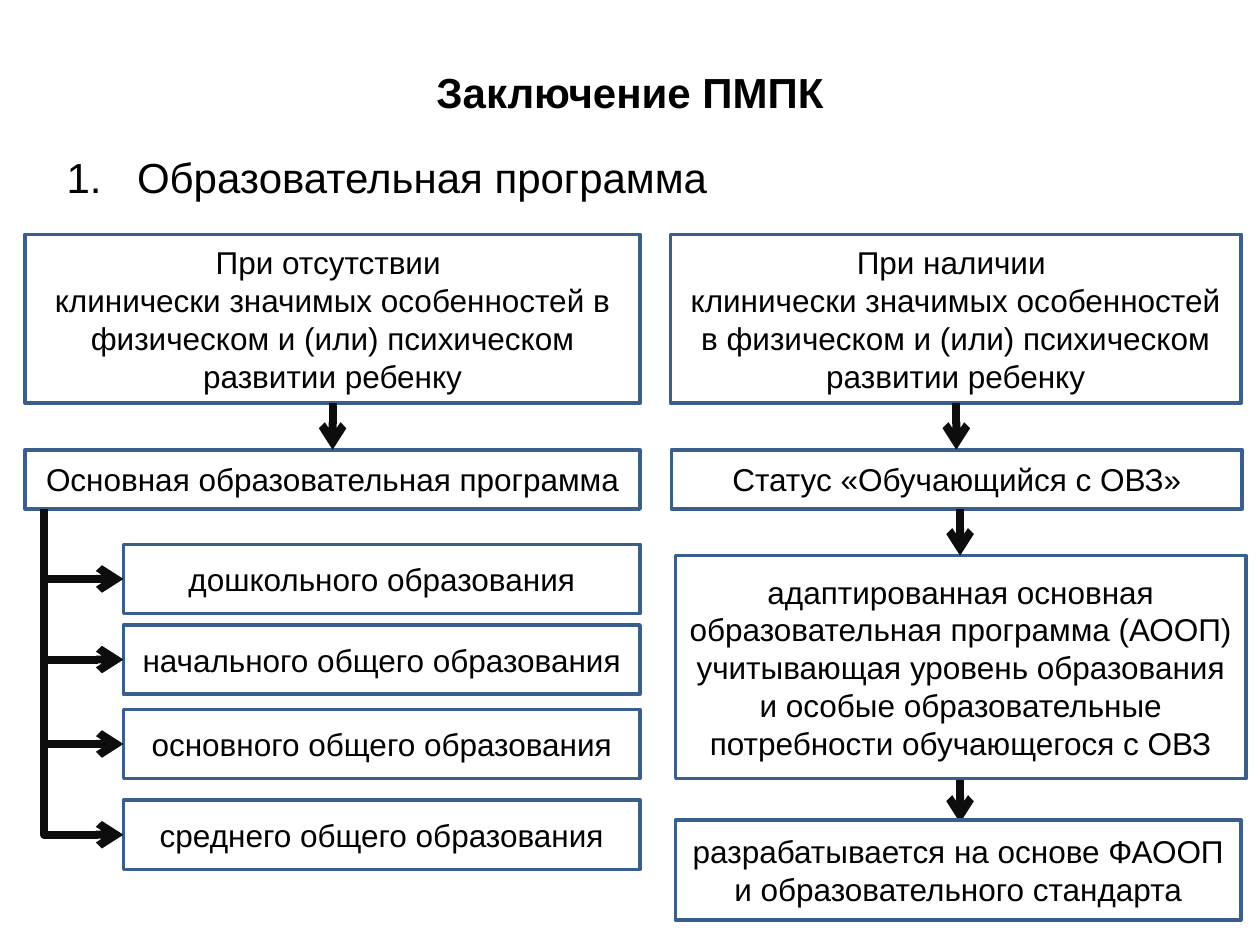
import pptx
import pptx.util
import pptx.dml.color
import pptx.enum.shapes
import pptx.enum.text
import pptx.oxml
import pptx.oxml.ns
from pptx.util import Inches

BLACK = pptx.dml.color.RGBColor(0x00, 0x00, 0x00)
WHITE = pptx.dml.color.RGBColor(0xFF, 0xFF, 0xFF)
BORDER = pptx.dml.color.RGBColor(0x3A, 0x5F, 0x8C)
ARROW = pptx.dml.color.RGBColor(0x0D, 0x0D, 0x0D)
FONT = "Arial"
CENTER = pptx.enum.text.PP_ALIGN.CENTER
MIDDLE = pptx.enum.text.MSO_ANCHOR.MIDDLE
CONNECTOR = pptx.enum.shapes.MSO_CONNECTOR

FEATURES = "клинически значимых особенностей в физическом и (или) психическом развитии ребенку"
CONDITION_TOP, CONDITION_HEIGHT = 1.86, 1.34
RESULT_TOP, RESULT_HEIGHT = 3.57, 0.47
LEVEL_HEIGHT = 0.55
LEVELS = [  # top, label
    (4.32, "дошкольного образования"),
    (4.96, "начального общего образования"),
    (5.63, "основного общего образования"),
    (6.35, "среднего общего образования"),
]


def add_xml(parent, tag, **attributes):
    child = pptx.oxml.parse_xml(f"<a:{tag} {pptx.oxml.ns.nsdecls('a')}/>")
    for name, value in attributes.items():
        child.set(name, value)
    parent.append(child)


def format_text(frame, size, bold=False):
    for paragraph in frame.paragraphs:
        for run in paragraph.runs:
            run.font.name = FONT
            run.font.size = pptx.util.Pt(size)
            run.font.bold = bold
            run.font.color.rgb = BLACK


def add_box(slide, left, top, width, height, text):
    box = slide.shapes.add_shape(
        pptx.enum.shapes.MSO_SHAPE.RECTANGLE,
        Inches(left), Inches(top), Inches(width), Inches(height))
    box.shadow.inherit = False
    box.fill.solid()
    box.fill.fore_color.rgb = WHITE
    box.line.color.rgb = BORDER
    box.line.width = pptx.util.Pt(2)
    frame = box.text_frame
    frame.word_wrap = True
    frame.vertical_anchor = MIDDLE
    frame.text = text
    for paragraph in frame.paragraphs:
        paragraph.alignment = CENTER
    format_text(frame, 18)


def add_arrow(slide, x1, y1, x2, y2, kind=CONNECTOR.STRAIGHT):
    arrow = slide.shapes.add_connector(
        kind, Inches(x1), Inches(y1), Inches(x2), Inches(y2))
    arrow.line.color.rgb = ARROW
    arrow.line.width = pptx.util.Pt(4.5)
    add_xml(arrow.line._get_or_add_ln(), "tailEnd", type="arrow")
    add_xml(arrow._element.spPr, "effectLst")
    return arrow


def add_corner_arrow(slide, x1, y1, x2, y2):
    """Arrow that runs down from the start, then right to the end."""
    run, drop = x2 - x1, y2 - y1
    center_x, center_y = (x1 + x2) / 2, (y1 + y2) / 2
    # Placed lying down and mirrored, then turned a quarter to the left.
    arrow = add_arrow(slide, center_x + drop / 2, center_y - run / 2,
                      center_x - drop / 2, center_y + run / 2, CONNECTOR.ELBOW)
    properties = arrow._element.spPr
    properties.find(pptx.oxml.ns.qn("a:xfrm")).set("rot", str(270 * 60000))
    properties.find(pptx.oxml.ns.qn("a:prstGeom")).set("prst", "bentConnector2")


def add_heading(slide, left, top, width, height, text):
    heading = slide.shapes.add_textbox(
        Inches(left), Inches(top), Inches(width), Inches(height))
    frame = heading.text_frame
    frame.word_wrap = True
    frame.text = text
    return frame


def add_title(slide, left, top, width, height):
    title = add_heading(slide, left, top, width, height, "Заключение ПМПК")
    title.vertical_anchor = MIDDLE
    title.paragraphs[0].alignment = CENTER
    format_text(title, 24, bold=True)


def add_numbered_topic(slide, left, top, width, height):
    topic = add_heading(slide, left, top, width, height, "Образовательная программа")
    paragraph = topic.paragraphs[0]
    paragraph.space_before = pptx.util.Pt(4.8)
    properties = paragraph._p.get_or_add_pPr()
    properties.set("marL", str(Inches(0.56)))
    properties.set("indent", str(Inches(-0.56)))
    add_xml(properties, "buFont", typeface="+mj-lt")
    add_xml(properties, "buAutoNum", type="arabicPeriod")
    format_text(topic, 24)


def add_main_program(slide, left, width):
    """Left column: the main program branching into education levels."""
    result_bottom = RESULT_TOP + RESULT_HEIGHT
    trunk_x, level_left = left + 0.15, left + 0.78
    add_box(slide, left, CONDITION_TOP, width, CONDITION_HEIGHT,
            "При отсутствии \n" + FEATURES)
    add_box(slide, left, RESULT_TOP, width, RESULT_HEIGHT,
            "Основная образовательная программа")
    middle = left + width / 2
    add_arrow(slide, middle, CONDITION_TOP + CONDITION_HEIGHT, middle, RESULT_TOP)
    for top, label in LEVELS:
        add_box(slide, level_left, top, left + width - level_left, LEVEL_HEIGHT, label)
        level_y = top + LEVEL_HEIGHT / 2
        if label == LEVELS[-1][1]:
            add_corner_arrow(slide, trunk_x, result_bottom, level_left, level_y)
        else:
            add_arrow(slide, trunk_x, level_y, level_left, level_y)


def add_adapted_program(slide, left, width):
    """Right column: a chain of boxes ending in the adapted program."""
    program_top, program_height, basis_top = 4.41, 1.77, 6.51
    add_arrow(slide, left + 2.3, program_top + program_height - 0.02,
              left + 2.3, basis_top + 0.02)
    add_box(slide, left, CONDITION_TOP, width, CONDITION_HEIGHT,
            "При наличии \n" + FEATURES)
    add_box(slide, left + 0.01, RESULT_TOP, width, RESULT_HEIGHT,
            "Статус «Обучающийся с ОВЗ»")
    add_box(slide, left + 0.04, program_top, width, program_height,
            "адаптированная основная образовательная программа (АООП) учитывающая "
            "уровень образования и особые образовательные потребности обучающегося с ОВЗ")
    add_arrow(slide, left + 2.27, CONDITION_TOP + CONDITION_HEIGHT,
              left + 2.27, RESULT_TOP)
    add_arrow(slide, left + 2.3, RESULT_TOP + RESULT_HEIGHT, left + 2.3, program_top)
    add_box(slide, left + 0.04, basis_top, width - 0.04, 0.79,
            "разрабатывается на основе ФАООП и образовательного стандарта")


def main():
    presentation = pptx.Presentation()
    presentation.slide_width = Inches(10)
    presentation.slide_height = Inches(7.5)
    slide = presentation.slides.add_slide(presentation.slide_layouts[6])
    add_title(slide, 0.5, 0.3, 9, 0.85)
    add_numbered_topic(slide, 0.43, 1.15, 9, 0.74)
    add_main_program(slide, 0.2, 4.88)
    add_adapted_program(slide, 5.32, 4.53)
    presentation.save("out.pptx")


if __name__ == "__main__":
    main()
